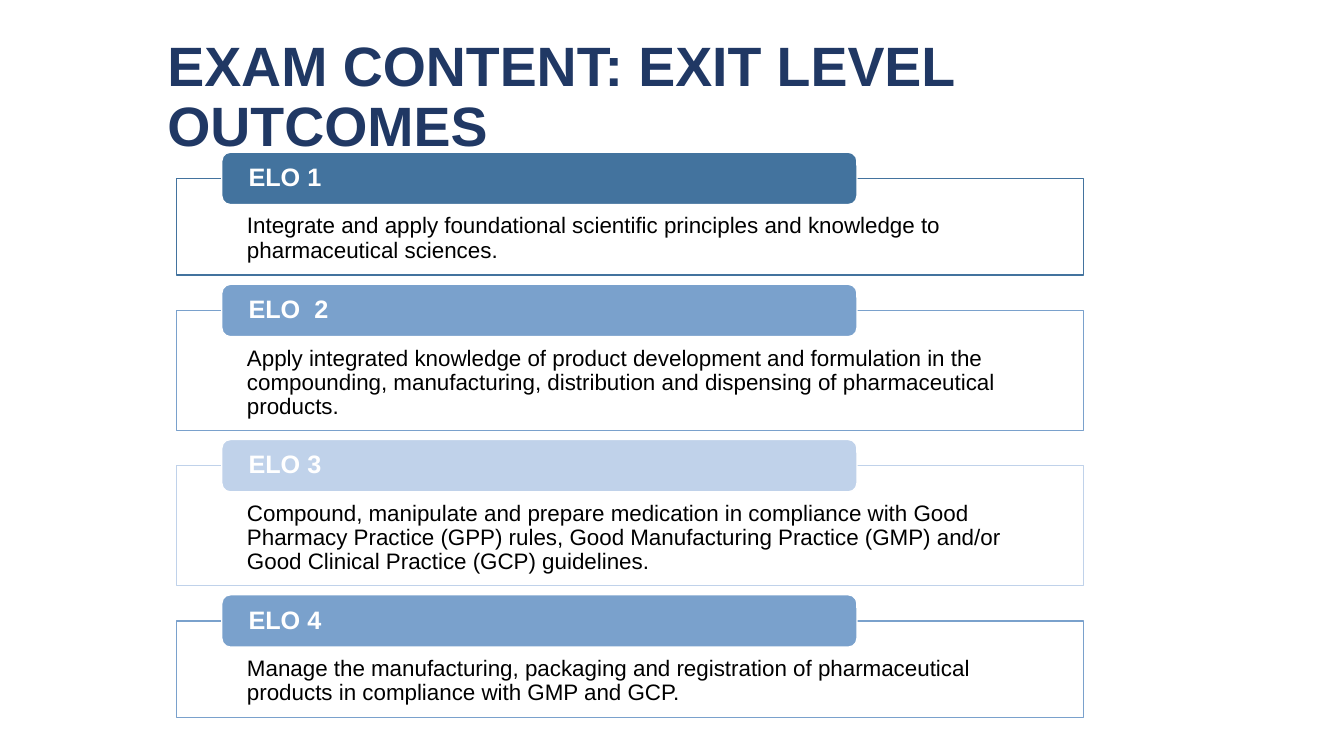
from pptx import Presentation
from pptx.dml.color import RGBColor
from pptx.enum.shapes import MSO_SHAPE
from pptx.enum.text import MSO_ANCHOR, MSO_AUTO_SIZE, PP_ALIGN
from pptx.util import Pt

RECTANGLE = MSO_SHAPE.RECTANGLE
ROUNDED = MSO_SHAPE.ROUNDED_RECTANGLE
TOP = MSO_ANCHOR.TOP
MIDDLE = MSO_ANCHOR.MIDDLE
LEFT = PP_ALIGN.LEFT
NO_AUTOFIT = MSO_AUTO_SIZE.NONE

EMU_PER_PX = 9144
FONT = "Arial"
COLORS = {
    "title": "203864",
    "dark": "43739E",
    "medium": "7AA1CC",
    "light": "C0D2EA",
    "white": "FFFFFF",
    "black": "000000",
}

FIRST_TOP = 177
GAP = 35
TAB_RISE = 26
OUTCOMES = [
    ("ELO 1", "dark", 96,
     "Integrate and apply foundational scientific principles and knowledge to "
     "pharmaceutical sciences."),
    ("ELO  2", "medium", 119,
     "Apply integrated knowledge of product development and formulation in the "
     "compounding, manufacturing, distribution and dispensing of pharmaceutical "
     "products."),
    ("ELO 3", "light", 119,
     "Compound, manipulate and prepare medication in compliance with Good "
     "Pharmacy Practice (GPP) rules, Good Manufacturing Practice (GMP) and/or "
     "Good Clinical Practice (GCP) guidelines."),
    ("ELO 4", "medium", 96,
     "Manage the manufacturing, packaging and registration of pharmaceutical "
     "products in compliance with GMP and GCP."),
]


def px(length):
    return length * EMU_PER_PX


def color(name):
    return RGBColor.from_string(COLORS[name])


def write_text(shape, text, size, ink, bold=False, anchor=MIDDLE,
               insets=(10, 5, 10, 5)):
    frame = shape.text_frame
    frame.word_wrap = True
    frame.auto_size = NO_AUTOFIT
    frame.vertical_anchor = anchor
    (frame.margin_left, frame.margin_top,
     frame.margin_right, frame.margin_bottom) = map(px, insets)
    paragraph = frame.paragraphs[0]
    paragraph.alignment = LEFT
    paragraph.line_spacing = 0.9
    run = paragraph.add_run()
    run.text = text
    run.font.name = FONT
    run.font.size = Pt(size)
    run.font.bold = bold
    run.font.color.rgb = color(ink)


def add_panel(slide, kind, bounds, fill, line):
    shape = slide.shapes.add_shape(kind, *map(px, bounds))
    shape.shadow.inherit = False
    shape.fill.solid()
    shape.fill.fore_color.rgb = color(fill)
    shape.line.color.rgb = color(line)
    shape.line.width = Pt(1)
    return shape


def add_title(slide, text):
    title = slide.shapes.title
    title.left, title.top, title.width, title.height = map(px, (156, 55, 1086, 85))
    write_text(title, text, size=39.6, ink="title", bold=True)


def add_outcome(slide, top, height, label, accent, description):
    box = add_panel(slide, RECTANGLE, (175, top, 900, height), "white", accent)
    write_text(box, description, size=16, ink="black", anchor=TOP,
               insets=(70, 36, 70, 12))
    tab = add_panel(slide, ROUNDED, (220, top - TAB_RISE, 630, 52), accent, "white")
    write_text(tab, label, size=18, ink="white", bold=True, insets=(24, 0, 24, 0))


def main():
    presentation = Presentation()
    presentation.slide_width = px(1333)
    presentation.slide_height = px(750)
    slide = presentation.slides.add_slide(presentation.slide_layouts[5])
    add_title(slide, "EXAM CONTENT: EXIT LEVEL OUTCOMES")
    top = FIRST_TOP
    for label, accent, height, description in OUTCOMES:
        add_outcome(slide, top, height, label, accent, description)
        top += height + GAP
    presentation.save("out.pptx")


if __name__ == "__main__":
    main()
